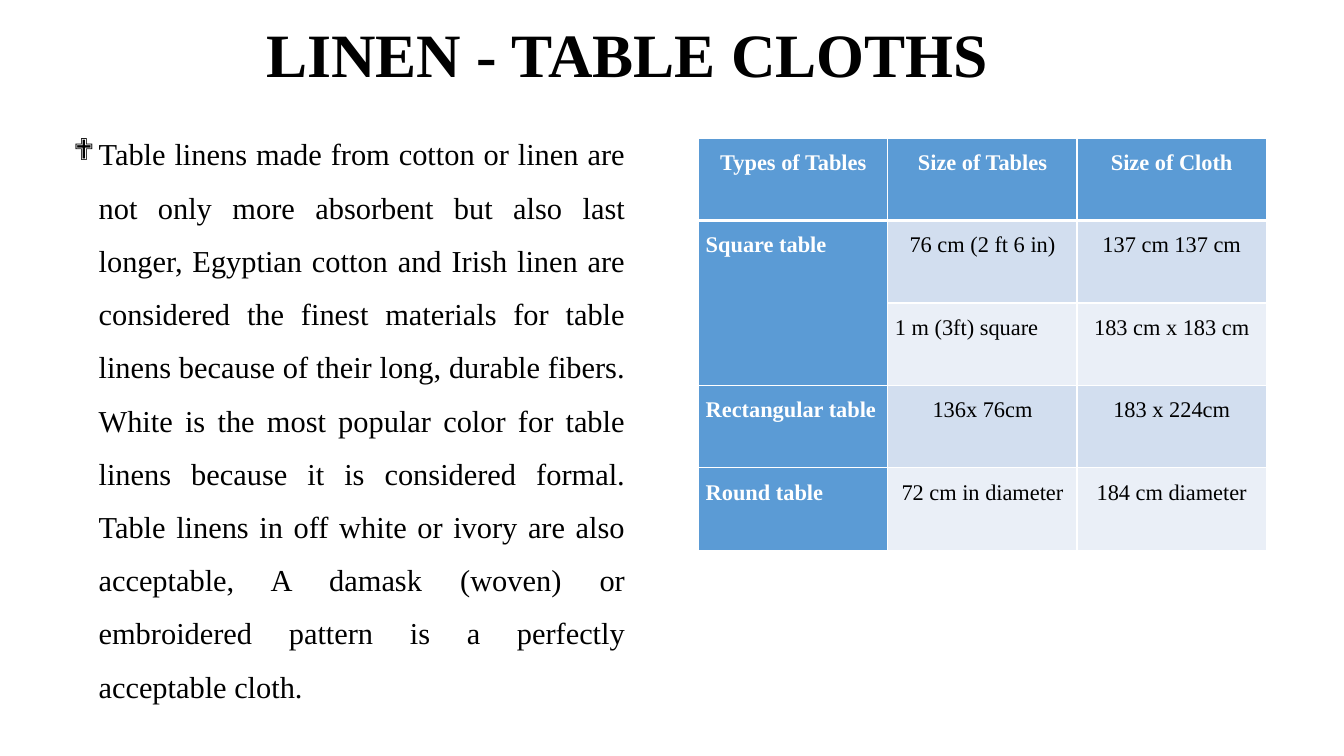
from lxml.etree import SubElement
from pptx import Presentation
from pptx.dml.color import RGBColor
from pptx.enum.text import MSO_ANCHOR, PP_ALIGN
from pptx.oxml.ns import qn
from pptx.util import Inches, Pt

BLACK = RGBColor(0x00, 0x00, 0x00)
WHITE = RGBColor(0xFF, 0xFF, 0xFF)
BLUE = RGBColor(0x5B, 0x9B, 0xD5)
BAND_DARK = RGBColor(0xD2, 0xDE, 0xEF)
BAND_LIGHT = RGBColor(0xEA, 0xEF, 0xF7)

LINEN_ADVICE = (
    "Table linens made from cotton or linen are not only more absorbent but "
    "also last longer, Egyptian cotton and Irish linen are considered the "
    "finest materials for table linens because of their long, durable fibers. "
    "White is the most popular color for table linens because it is considered "
    "formal. Table linens in off white or ivory are also acceptable, A damask "
    "(woven) or embroidered pattern is a perfectly acceptable cloth."
)
CLOTH_SIZES = [
    ["Types of Tables", "Size of Tables", "Size of Cloth"],
    ["Square table", "76 cm (2 ft 6 in)", "137 cm 137 cm"],
    ["", "1 m (3ft) square", "183 cm x 183 cm"],
    ["Rectangular table", "136x 76cm", "183 x 224cm"],
    ["Round table", "72 cm in diameter", "184 cm diameter"],
]
LEFT_SIZE = (2, 1)  # the one size that is not centred


class LinenSlide:
    """Holds the slide and its text style."""

    FONT = "Times New Roman"

    def __init__(self, presentation):
        self.slide = presentation.slides.add_slide(presentation.slide_layouts[6])

    def paragraph(self, frame, text, align, spacing, color, **font_format):
        paragraph = frame.paragraphs[0]
        paragraph.alignment = align
        paragraph.line_spacing = spacing
        run = paragraph.add_run()
        run.text = text
        for name, value in {"name": self.FONT, **font_format}.items():
            setattr(run.font, name, value)
        run.font.color.rgb = color
        return paragraph

    def text(self, left, top, width, height, anchor, *content, **font_format):
        box = self.slide.shapes.add_textbox(
            Inches(left), Inches(top), Inches(width), Inches(height))
        frame = box.text_frame
        frame.word_wrap = True
        frame.vertical_anchor = anchor
        return self.paragraph(frame, *content, **font_format)

    def bullet(self, paragraph, symbol, indent):
        properties = paragraph._p.get_or_add_pPr()
        properties.set("marL", str(Inches(indent)))
        properties.set("indent", str(-Inches(indent)))
        SubElement(properties, qn("a:buFont"), typeface="Wingdings")
        SubElement(properties, qn("a:buChar"), char=symbol)

    def border(self, cell, side, width):
        line = SubElement(cell._tc.get_or_add_tcPr(), qn(f"a:ln{side}"),
                          w=str(Pt(width)))
        fill = SubElement(line, qn("a:solidFill"))
        SubElement(fill, qn("a:srgbClr"), val=str(WHITE))

    def cell(self, cell, row, column, text):
        heading = row == 0 or column == 0
        centred = row == 0 or (column > 0 and (row, column) != LEFT_SIZE)
        margins = {"margin_left": 0.07, "margin_right": 0.07,
                   "margin_top": 0, "margin_bottom": 0}
        for name, value in margins.items():
            setattr(cell, name, Inches(value))
        # Thick rule between the header and the first row
        widths = {"L": 1, "R": 1, "T": 3 if row == 1 else 1, "B": 3 if row == 0 else 1}
        for side, width in widths.items():
            self.border(cell, side, width)
        cell.fill.solid()
        band = BAND_DARK if row % 2 else BAND_LIGHT
        cell.fill.fore_color.rgb = BLUE if heading else band
        if text:
            self.paragraph(cell.text_frame, text,
                           PP_ALIGN.CENTER if centred else PP_ALIGN.JUSTIFY, 1.5,
                           WHITE if heading else BLACK, size=Pt(16), bold=heading)

    def table(self, left, top, width, height, rows):
        table = self.slide.shapes.add_table(
            len(rows), len(rows[0]), Inches(left), Inches(top),
            Inches(width), Inches(height)).table
        table.first_row = table.horz_banding = False
        for row, texts in enumerate(rows):
            for column, text in enumerate(texts):
                self.cell(table.cell(row, column), row, column, text)
        return table


def main():
    presentation = Presentation()
    presentation.slide_width = Inches(13.33)
    presentation.slide_height = Inches(7.5)
    linen = LinenSlide(presentation)

    # Title
    linen.text(0.55, 0.19, 11.5, 0.77, MSO_ANCHOR.MIDDLE,
               "LINEN - TABLE CLOTHS ", PP_ALIGN.CENTER, 0.9, BLACK,
               size=Pt(44), bold=True)

    # Advice on linen
    advice = linen.text(0.63, 1.13, 5.67, 5.96, MSO_ANCHOR.TOP,
                        LINEN_ADVICE, PP_ALIGN.JUSTIFY, 1.46, BLACK,
                        size=Pt(21.7))
    linen.bullet(advice, "❖", 0.25)

    # Cloth sizes, with both square tables under one heading
    sizes = linen.table(6.93, 1.37, 5.63, 4.09, CLOTH_SIZES)
    sizes.cell(1, 0).merge(sizes.cell(2, 0))

    presentation.save("out.pptx")


if __name__ == "__main__":
    main()
